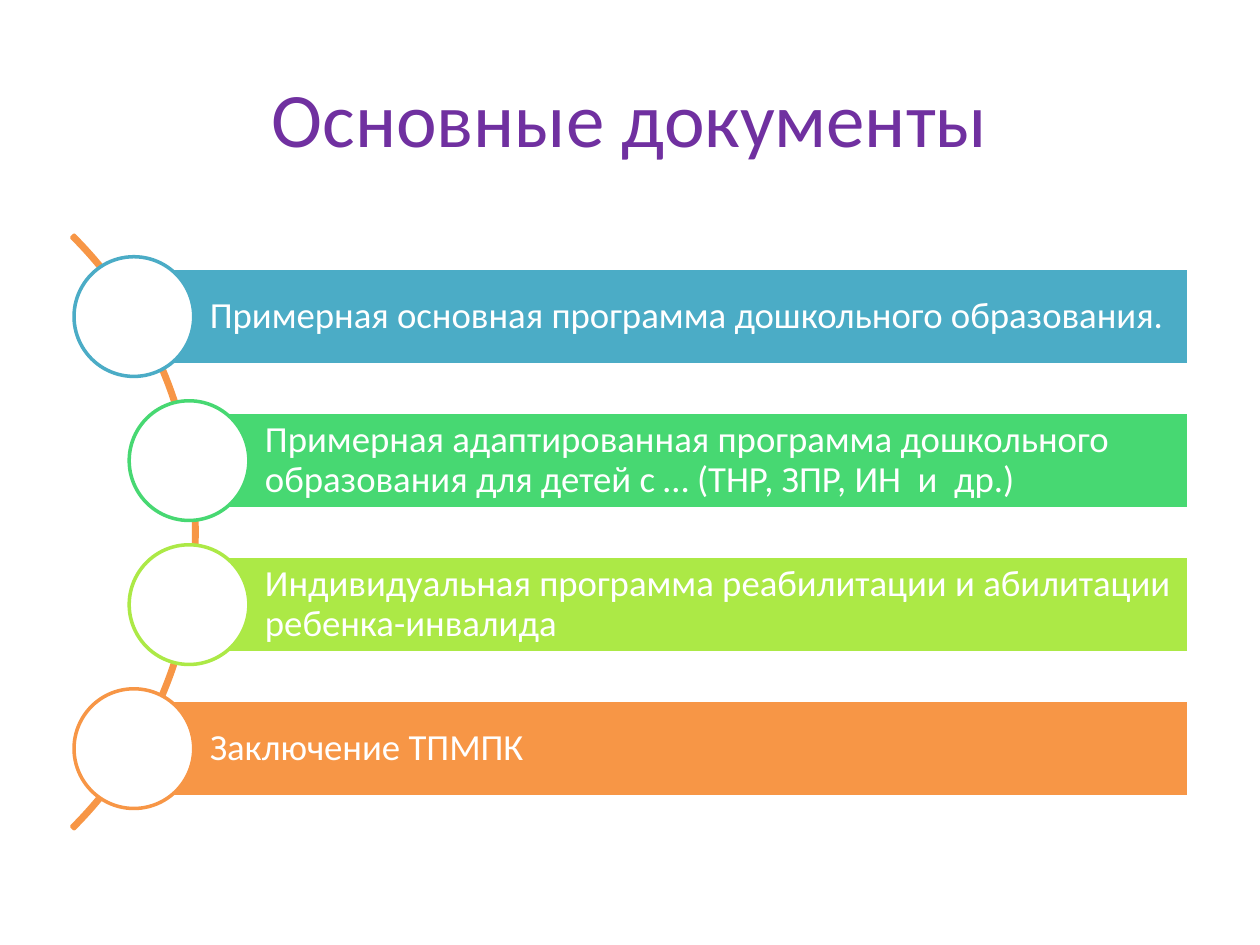
"""Build a slide listing key documents along a curved arc."""
from pptx import Presentation
from pptx.dml.color import RGBColor
from pptx.enum import shapes as sh, text as tx
from pptx.util import Pt


def paint(fmt, tone):
    fmt.solid()
    fmt.fore_color.rgb = RGBColor.from_string(tone)


def add(kind, left, top, wide, high, fill, line):
    shape = slide.shapes.add_shape(kind, Pt(left), Pt(top), Pt(wide), Pt(high))
    shape.shadow.inherit = False
    if fill:
        paint(shape.fill, fill)
    else:
        shape.fill.background()
    paint(shape.line.fill, line)
    shape.line.width = Pt(2)
    return shape


deck = Presentation()
deck.slide_width, deck.slide_height = Pt(720), Pt(540)
slide = deck.slides.add_slide(deck.slide_layouts[5])

title = slide.shapes.title
title.left, title.top, title.width, title.height = Pt(36), Pt(21.6), Pt(648), Pt(90)
title.text_frame.vertical_anchor = tx.MSO_ANCHOR.MIDDLE
para = title.text_frame.paragraphs[0]
para.alignment = tx.PP_ALIGN.CENTER
run = para.add_run()
run.text = "Основные документы"
run.font.size, run.font.name = Pt(44), "Calibri"
paint(run.font.fill, "7030A0")

arc = add(sh.MSO_SHAPE.BLOCK_ARC, -367, 64.2, 479.6, 479.6, None, "F79646")
for i, value in enumerate((189, 27, 0.004)):
    arc.adjustments[i] = value

outer, inner, right = 76.5, 108, 679.2
first, step = 180.9, 82.3
high, disc = 54.7, 68.4
items = [
    (outer, "4BACC6", "Примерная основная программа дошкольного образования."),
    (inner, "47D872", "Примерная адаптированная программа дошкольного "
                      "образования для детей с … (ТНР, ЗПР, ИН  и  др.)"),
    (inner, "ACE946", "Индивидуальная программа реабилитации и абилитации "
                      "ребенка-инвалида"),
    (outer, "F79646", "Заключение ТПМПК"),
]
for i, (left, tone, words) in enumerate(items):
    mid = first + i * step
    bar = add(sh.MSO_SHAPE.RECTANGLE, left, mid - high / 2, right - left, high,
              tone, "FFFFFF")
    frame = bar.text_frame
    frame.word_wrap = True
    frame.vertical_anchor = tx.MSO_ANCHOR.MIDDLE
    frame.margin_left = Pt(43.4)
    frame.margin_right = frame.margin_top = frame.margin_bottom = Pt(4.2)
    para = frame.paragraphs[0]
    para.alignment = tx.PP_ALIGN.LEFT
    para.line_spacing = 0.9
    run = para.add_run()
    run.text = words
    run.font.size, run.font.name = Pt(21), "Calibri"
    paint(run.font.fill, "FFFFFF")
    add(sh.MSO_SHAPE.OVAL, left - disc / 2, mid - disc / 2, disc, disc,
        "FFFFFF", tone)

deck.save("out.pptx")
